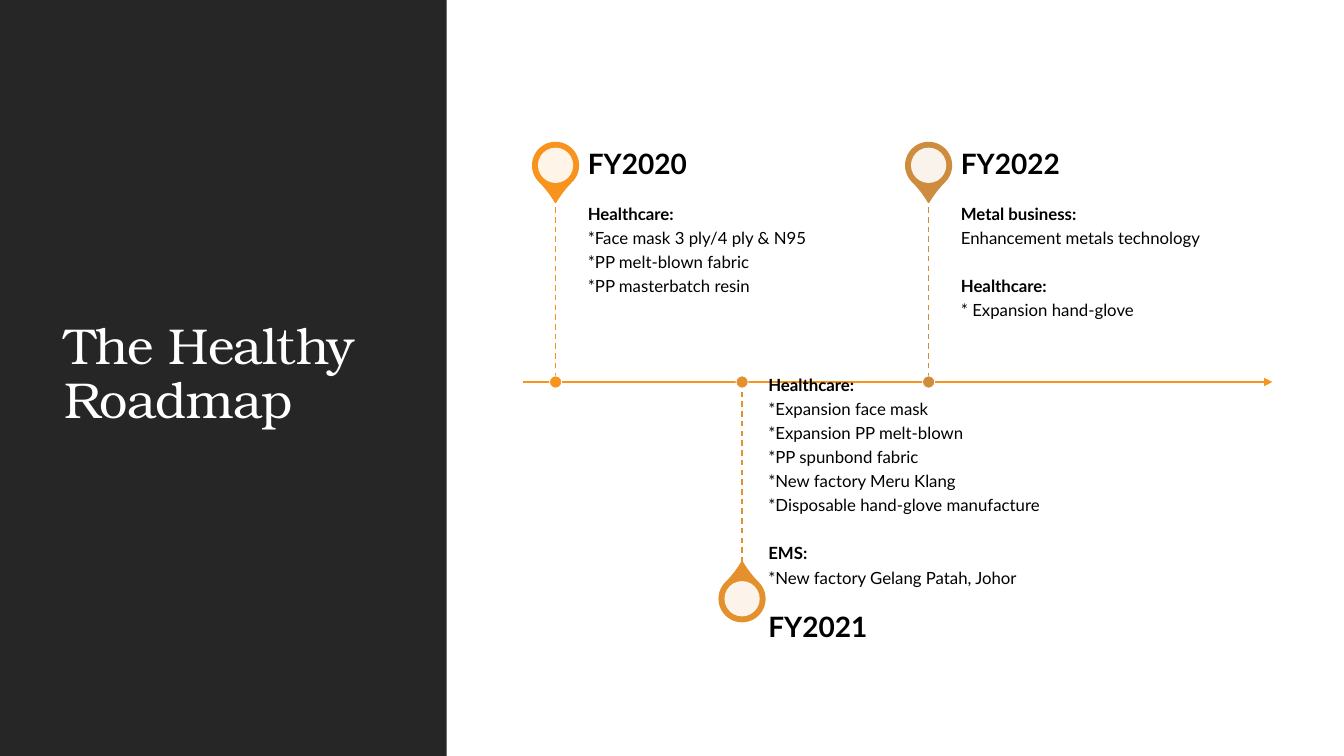
from dataclasses import dataclass

from lxml.etree import SubElement
from pptx import Presentation
from pptx.dml.color import RGBColor
from pptx.enum.dml import MSO_LINE
from pptx.enum.shapes import MSO_CONNECTOR, MSO_SHAPE
from pptx.enum.text import MSO_ANCHOR, PP_ALIGN
from pptx.oxml.ns import qn
from pptx.util import Inches, Pt

WHITE = RGBColor(0xFF, 0xFF, 0xFF)
BLACK = RGBColor(0x00, 0x00, 0x00)
CHARCOAL = RGBColor(0x26, 0x26, 0x26)
ORANGE = RGBColor(0xF8, 0x93, 0x1D)
AMBER = RGBColor(0xE3, 0x90, 0x2D)
BRONZE = RGBColor(0xCE, 0x8D, 0x3E)

TITLE_FONT = "TeX Gyre Bonum"
BODY_FONT = "Lato"

PIN_SIZE = 0.45
PIN_HOLE_SIZE = 0.35
DOT_SIZE = 0.12
PIN_DISTANCE = 2.15
STEM_LENGTH = 1.83
TEXT_WIDTH = 3.08
LABEL_HEIGHT = 0.64
MILESTONE_STEP = 1.85


@dataclass
class Milestone:
    """A year with groups of (heading, items)."""
    year: str
    color: RGBColor
    groups: list
    above: bool


MILESTONES = [
    Milestone("FY2020", ORANGE, [
        ("Healthcare:", ["*Face mask 3 ply/4 ply & N95", "*PP melt-blown fabric",
                         "*PP masterbatch resin"]),
    ], above=True),
    Milestone("FY2021", AMBER, [
        ("Healthcare:", ["*Expansion face mask", "*Expansion PP melt-blown",
                         "*PP spunbond fabric", "*New factory Meru Klang",
                         "*Disposable hand-glove manufacture"]),
        ("EMS:", ["*New factory Gelang Patah, Johor"]),
    ], above=False),
    Milestone("FY2022", BRONZE, [
        ("Metal business:", ["Enhancement metals technology"]),
        ("Healthcare:", ["* Expansion hand-glove"]),
    ], above=True),
]


def add_filled_shape(slide, kind, left, top, width, height, fill, line=None, line_width=0):
    shape = slide.shapes.add_shape(
        kind, Inches(left), Inches(top), Inches(width), Inches(height))
    shape.shadow.inherit = False
    shape.fill.solid()
    shape.fill.fore_color.rgb = fill
    if line is None:
        shape.line.fill.background()
    else:
        shape.line.color.rgb = line
        shape.line.width = Pt(line_width)
    return shape


def add_centered_shape(slide, kind, x, y, size, fill, line=None, line_width=0):
    return add_filled_shape(slide, kind, x - size / 2, y - size / 2, size, size,
                            fill, line, line_width)


def add_line(slide, start, end, color, width):
    line = slide.shapes.add_connector(
        MSO_CONNECTOR.STRAIGHT, *(Inches(value) for value in (*start, *end)))
    line.line.color.rgb = color
    line.line.width = Pt(width)
    SubElement(line._element.spPr, qn("a:effectLst"))
    return line


def add_text_frame(slide, left, top, height, anchor, insets):
    box = slide.shapes.add_textbox(
        Inches(left), Inches(top), Inches(TEXT_WIDTH), Inches(height))
    frame = box.text_frame
    frame.word_wrap = True
    frame.vertical_anchor = anchor
    (frame.margin_left, frame.margin_top,
     frame.margin_right, frame.margin_bottom) = (Inches(inset) for inset in insets)
    return frame


def write_paragraph(paragraph, text, size, bold):
    paragraph.text = text
    paragraph.line_spacing = 0.9
    paragraph.space_after = Pt(size * 0.35)
    paragraph.font.name = BODY_FONT
    paragraph.font.size = Pt(size)
    paragraph.font.bold = bold
    paragraph.font.color.rgb = BLACK


def add_title_panel(slide, left, top, width, height):
    panel = add_filled_shape(slide, MSO_SHAPE.RECTANGLE, left, top, width, height, CHARCOAL)
    title = slide.shapes.title
    panel._element.addnext(title._element)
    title.left, title.top = Inches(left + 0.54), Inches(top + 0.57)
    title.width, title.height = Inches(width - 1.06), Inches(height - 1.19)
    title.text_frame.text = "The Healthy Roadmap"
    title.text_frame.word_wrap = True
    title.text_frame.vertical_anchor = MSO_ANCHOR.MIDDLE
    paragraph = title.text_frame.paragraphs[0]
    paragraph.alignment = PP_ALIGN.LEFT
    paragraph.line_spacing = 0.9
    paragraph.font.name = TITLE_FONT
    paragraph.font.size = Pt(36)
    paragraph.font.color.rgb = WHITE
    paragraph.runs[0].font._element.set("spc", "-50")


def add_pin(slide, x, y, color, rotation):
    pin = add_centered_shape(slide, MSO_SHAPE.TEAR, x, y, PIN_SIZE, color, color, 1.25)
    pin.adjustments[0] = 1.15
    pin.rotation = rotation
    hole = add_centered_shape(slide, MSO_SHAPE.OVAL, x, y, PIN_HOLE_SIZE, WHITE)
    white = hole._element.spPr.find(qn("a:solidFill"))[0]
    SubElement(white, qn("a:alpha"), val="90000")


def add_details(slide, left, top, groups, anchor, insets):
    frame = add_text_frame(slide, left, top, STEM_LENGTH, anchor, insets)
    paragraph = frame.paragraphs[0]
    for group_index, (heading, items) in enumerate(groups):
        if group_index:
            paragraph = frame.add_paragraph()
            paragraph.space_before = Pt(17.2)
        write_paragraph(paragraph, heading, 12, True)
        for item in items:
            write_paragraph(frame.add_paragraph(), item, 12, False)


def add_milestone(slide, x, axis_y, milestone):
    """Place a pin, its stem and its text above or below the axis."""
    if milestone.above:
        direction, rotation, text_left = -1, 135, x + 0.32
        details_top = axis_y - STEM_LENGTH
        label_top = details_top - LABEL_HEIGHT
        anchor, insets = MSO_ANCHOR.TOP, (0, 0.08, 0.08, 0.12)
    else:
        direction, rotation, text_left = 1, 315, x + 0.26
        details_top = axis_y + 0.29
        label_top = details_top + STEM_LENGTH
        anchor, insets = MSO_ANCHOR.BOTTOM, (0, 0.12, 0, 0.08)

    add_pin(slide, x, axis_y + direction * PIN_DISTANCE, milestone.color, rotation)
    add_details(slide, text_left, details_top, milestone.groups, anchor, insets)
    label = add_text_frame(slide, text_left, label_top, LABEL_HEIGHT,
                           MSO_ANCHOR.MIDDLE, (0, 0, 0.14, 0))
    write_paragraph(label.paragraphs[0], milestone.year, 20, True)

    ends = sorted([axis_y, axis_y + direction * STEM_LENGTH])
    stem = add_line(slide, (x, ends[0]), (x, ends[1]), milestone.color, 1)
    stem.line.dash_style = MSO_LINE.DASH
    add_centered_shape(slide, MSO_SHAPE.OVAL, x, axis_y, DOT_SIZE,
                       milestone.color, WHITE, 0.5)


def add_timeline(slide, left, axis_y, width):
    axis = add_line(slide, (left, axis_y), (left + width, axis_y), ORANGE, 1.5)
    SubElement(axis.line._get_or_add_ln(), qn("a:tailEnd"), type="triangle")
    for index, milestone in enumerate(MILESTONES):
        add_milestone(slide, left + 0.32 + index * MILESTONE_STEP, axis_y, milestone)


def main():
    presentation = Presentation()
    presentation.slide_width = Inches(13.33)
    presentation.slide_height = Inches(7.5)
    slide = presentation.slides.add_slide(presentation.slide_layouts[5])
    add_title_panel(slide, 0, 0, 4.43, 7.5)
    add_timeline(slide, 5.19, 3.79, 7.43)
    presentation.save("out.pptx")


if __name__ == "__main__":
    main()
